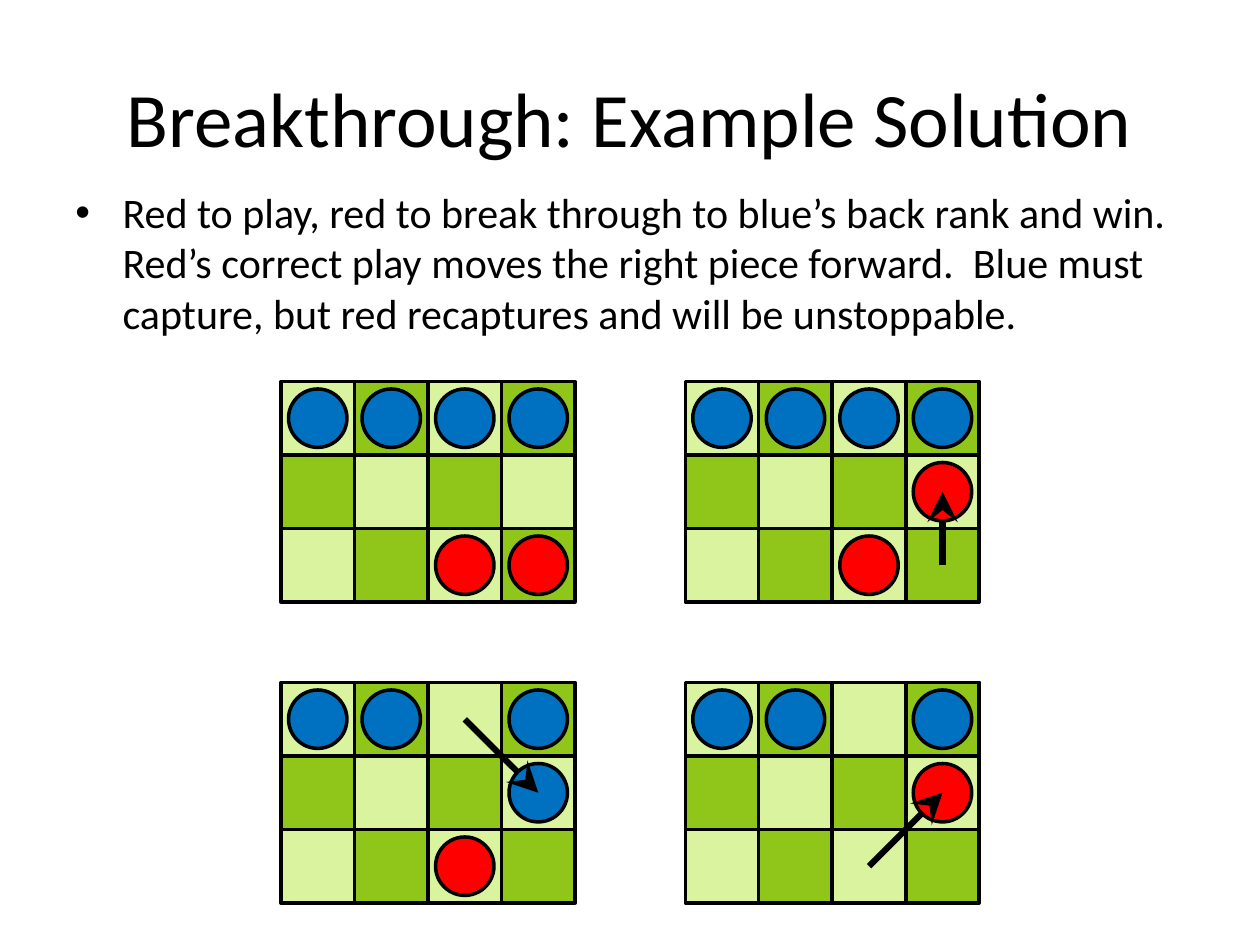
from lxml import etree
from pptx import Presentation
from pptx.dml.color import RGBColor
from pptx.enum.shapes import MSO_CONNECTOR, MSO_SHAPE
from pptx.enum.text import MSO_ANCHOR, PP_ALIGN
from pptx.oxml.ns import qn
from pptx.util import Pt

RECT, OVAL = MSO_SHAPE.RECTANGLE, MSO_SHAPE.OVAL
STRAIGHT = MSO_CONNECTOR.STRAIGHT
TOP, MIDDLE = MSO_ANCHOR.TOP, MSO_ANCHOR.MIDDLE
LEFT, CENTER = PP_ALIGN.LEFT, PP_ALIGN.CENTER

TITLE = "Breakthrough: Example Solution"
BODY = ("Red to play, red to break through to blue’s back rank and win.  "
        "Red’s correct play moves the right piece forward.  Blue must "
        "capture, but red recaptures and will be unstoppable.")

# Rows of each board (B blue, R red, . empty) and its move as (column, row) pairs
BOARDS = [
    (("BBBB", "....", "..RR"), None),
    (("BBBB", "...R", "..R."), ((3, 2), (3, 1))),
    (("BB.B", "...B", "..R."), ((2, 0), (3, 1))),
    (("BB.B", "...R", "...."), ((2, 2), (3, 1))),
]
PIECES = {"B": "0070C0", "R": "FF0000"}
SQUARES = ("D9F39F", "90C519")
BLACK = "000000"

CELL, PIECE = 42, 33.4
BOARD_X, BOARD_Y = 160.6, 218
STEP_X, STEP_Y = 231, 172


def color(value):
    return RGBColor.from_string(value)


def add_text(s, text, box, size, align, anchor):
    tf = s.shapes.add_textbox(*map(Pt, box)).text_frame
    tf.word_wrap = True
    tf.vertical_anchor = anchor
    p = tf.paragraphs[0]
    p.text = text
    p.alignment = align
    font = p.runs[0].font
    font.name, font.size, font.color.rgb = "Calibri", Pt(size), color(BLACK)
    return p


def add_bullet(p, indent):
    pPr = p._p.get_or_add_pPr()
    pPr.set("marL", str(Pt(indent)))
    pPr.set("indent", str(Pt(-indent)))
    before = etree.SubElement(pPr, qn("a:spcBef"))
    etree.SubElement(before, qn("a:spcPct"), val="20000")
    etree.SubElement(pPr, qn("a:buFont"), typeface="Arial")
    etree.SubElement(pPr, qn("a:buChar"), char="•")


def add_centered(s, kind, center, size, fill):
    x, y = center
    sp = s.shapes.add_shape(kind, Pt(x - size / 2), Pt(y - size / 2), Pt(size), Pt(size))
    sp.shadow.inherit = False
    sp.fill.solid()
    sp.fill.fore_color.rgb = color(fill)
    sp.line.color.rgb = color(BLACK)
    sp.line.width = Pt(2)


def add_arrow(s, start, end):
    line = s.shapes.add_connector(STRAIGHT, *map(Pt, start + end))
    line.line.color.rgb = color(BLACK)
    line.line.width = Pt(3.5)
    etree.SubElement(line.line._get_or_add_ln(), qn("a:tailEnd"),
                     type="stealth", w="lg", len="lg")
    etree.SubElement(line._element.spPr, qn("a:effectLst"))


def add_board(s, left, top, rows, move):
    def center(col, row):
        return left + (col + 0.5) * CELL, top + (row + 0.5) * CELL

    cells = [(c, r, mark) for r, row in enumerate(rows) for c, mark in enumerate(row)]
    for c, r, _ in cells:
        add_centered(s, RECT, center(c, r), CELL, SQUARES[(c + r) % 2])
    for c, r, mark in cells:
        if mark in PIECES:
            add_centered(s, OVAL, center(c, r), PIECE, PIECES[mark])
    if move:
        add_arrow(s, center(*move[0]), center(*move[1]))


def main():
    prs = Presentation()
    prs.slide_width, prs.slide_height = Pt(720), Pt(540)
    s = prs.slides.add_slide(prs.slide_layouts[6])

    # Title and bullet
    add_text(s, TITLE, (36, 21.6, 648, 90), 44, CENTER, MIDDLE)
    add_bullet(add_text(s, BODY, (36, 103, 648, 356.4), 24, LEFT, TOP), 27)

    # Boards, two by two
    for i, (rows, move) in enumerate(BOARDS):
        add_board(s, BOARD_X + i % 2 * STEP_X, BOARD_Y + i // 2 * STEP_Y, rows, move)

    prs.save("out.pptx")


if __name__ == "__main__":
    main()
